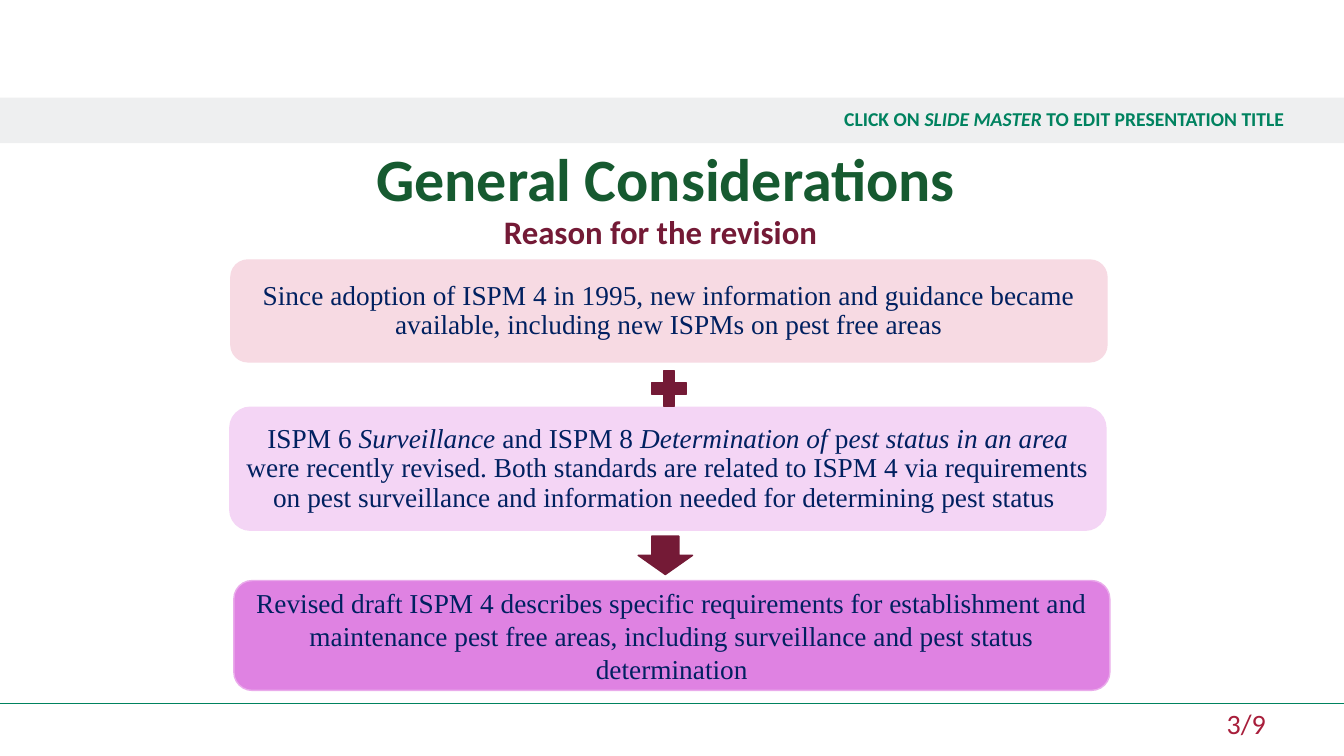
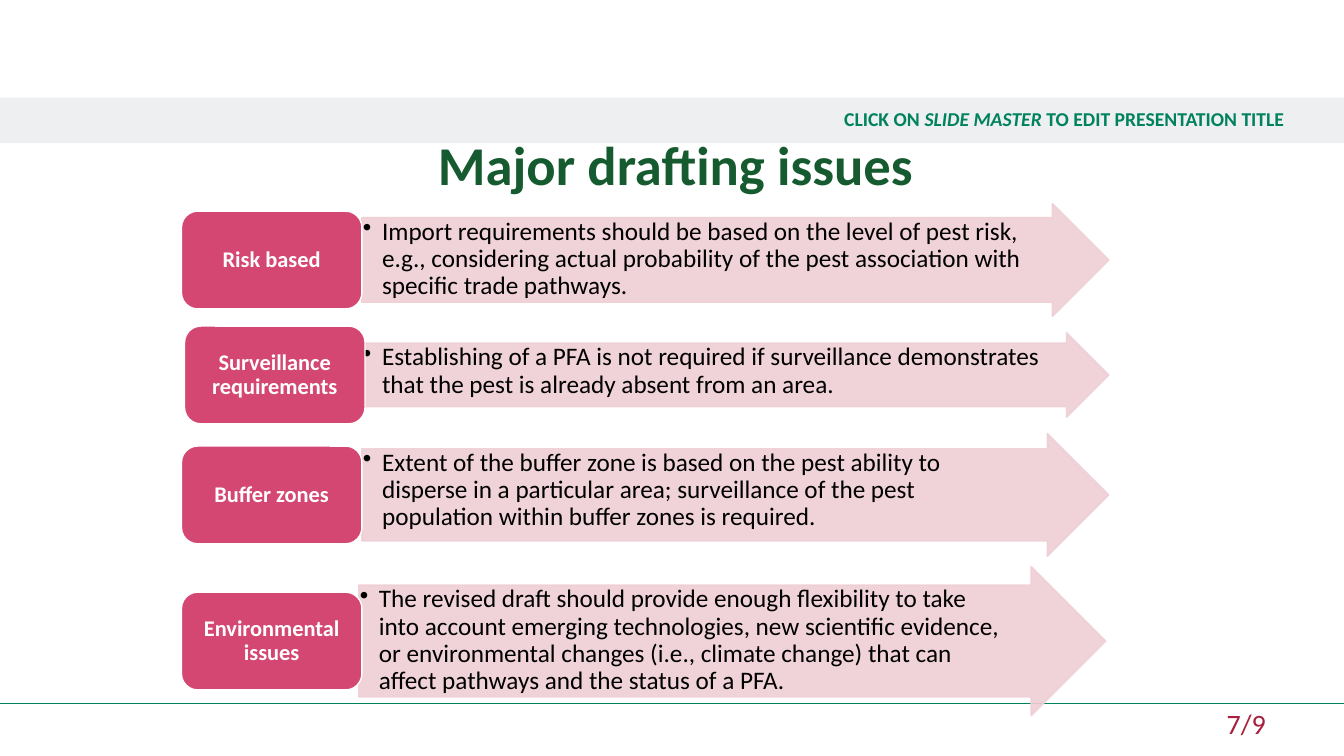
"""Build two slides on the revision of ISPM 4: its reasons and the drafting issues."""
from lxml.etree import SubElement
from pptx import Presentation
from pptx.dml.color import RGBColor
from pptx.enum.shapes import MSO_CONNECTOR as Connector, MSO_SHAPE as Preset
from pptx.enum.text import MSO_ANCHOR as Anchor, MSO_AUTO_SIZE as AutoSize, PP_ALIGN as Align
from pptx.oxml.ns import qn
from pptx.util import Inches, Pt

GREEN, DARK_GREEN, WINE, NAVY = "00825F", "165A30", "741A36", "002060"
PINK, ROSE, WHITE, BLACK = "EFCFD5", "D54773", "FFFFFF", "000000"
BAND, PAGE_RED = "D8D9DC", "A81E3B"

presentation = Presentation()
presentation.slide_width, presentation.slide_height = Inches(13.33), Inches(7.5)
column, row = presentation.slide_width / 100, presentation.slide_height / 100


def draw(slide, preset, left, top, width, height, fill, line=None, opacity=100):
    """Draw a flat preset shape, measured in columns and rows."""
    shape = slide.shapes.add_shape(
        preset, int(left * column), int(top * row), int(width * column), int(height * row))
    shape.shadow.inherit = False
    shape.fill.solid()
    shape.fill.fore_color.rgb = RGBColor.from_string(fill)
    if line:
        shape.line.color.rgb = RGBColor.from_string(line)
        shape.line.width = Pt(1)
    else:
        shape.line.fill.background()
    if opacity < 100:
        for color in list(shape.element.spPr.iter(qn("a:srgbClr"))):
            SubElement(color, qn("a:alpha"), val=str(opacity * 1000))
    return shape


def write(shape, runs, size, color, font="Calibri", bold=False, align=Align.CENTER,
          spacing=1.0, anchor=Anchor.MIDDLE, margins=(0.1, 0.05, 0.1, 0.05), wrap=True,
          bullet=False):
    """Fill a shape with one paragraph of (text, italic) runs."""
    frame = shape.text_frame
    left, top, right, bottom = (Inches(margin) for margin in margins)
    frame_format = {"auto_size": AutoSize.NONE, "word_wrap": wrap, "vertical_anchor": anchor,
                    "margin_left": left, "margin_top": top,
                    "margin_right": right, "margin_bottom": bottom}
    for name, value in frame_format.items():
        setattr(frame, name, value)
    paragraph = frame.paragraphs[0]
    if bullet:
        properties = paragraph._p.get_or_add_pPr()
        properties.set("marL", str(Inches(0.19)))
        properties.set("indent", str(-Inches(0.19)))
        SubElement(properties, qn("a:buChar"), char="•")
    paragraph.alignment, paragraph.line_spacing = align, spacing
    for text, italic in runs:
        run = paragraph.add_run()
        run.text = text
        run_format = {"name": font, "size": Pt(size), "bold": bold, "italic": italic}
        for name, value in run_format.items():
            setattr(run.font, name, value)
        run.font.color.rgb = RGBColor.from_string(color)


pages = [
    ("General Considerations ", 42.9, 17.1, 18, "3/9"),
    ("Major drafting issues", 39, 17.33, 16.67, "7/9"),
]
slides = []
for title_text, title_size, title_left, title_top, page_number in pages:
    slide = presentation.slides.add_slide(presentation.slide_layouts[5])
    slides.append(slide)
    title = slide.shapes.title
    title.left, title.top = int(title_left * column), int(title_top * row)
    title.width, title.height = int(65.85 * column), int(16.27 * row)
    write(title, [(title_text, False)], title_size, DARK_GREEN, bold=True, anchor=Anchor.TOP)

    rule_top = int(93.07 * row)
    rule = slide.shapes.add_connector(
        Connector.STRAIGHT, 0, rule_top, presentation.slide_width, rule_top)
    rule.line.color.rgb = RGBColor.from_string(GREEN)
    rule.line.width = Pt(1)
    SubElement(rule.element.spPr, qn("a:effectLst"))

    band = draw(slide, Preset.RECTANGLE, 0, 12.93, 100, 6, BAND, opacity=42)
    write(band, [("CLICK ON ", False), ("SLIDE MASTER ", True),
                 ("TO EDIT PRESENTATION TITLE", False)],
          14, GREEN, bold=True, align=Align.RIGHT, spacing=0.9,
          margins=(0.59, 0.05, 0.59, 0.05))

    number = slide.shapes.add_textbox(
        int(86.85 * column), int(93.47 * row), int(13.13 * column), int(5.2 * row))
    write(number, [(page_number, False)], 20, PAGE_RED, align=Align.LEFT,
          anchor=Anchor.TOP, margins=(0.59, 0, 0.39, 0.05))

reasons, issues = slides

subtitle = reasons.shapes.add_textbox(
    int(36.75 * column), int(27.33 * row), int(29.48 * column), int(6.53 * row))
write(subtitle, [("Reason for the revision", False)], 23.4, WINE, bold=True,
      align=Align.LEFT, anchor=Anchor.TOP, wrap=False)

reason_boxes = [
    (17.18, 34.4, 13.47, "F7DAE3", "F7DAE3", 0.9, [
        ("Since adoption of ISPM 4 in 1995, new information and guidance became available, "
         "including new ISPMs on pest free areas", False)]),
    (17.1, 53.87, 16.27, "F4D5F5", "F4D5F5", 0.9, [
        ("ISPM 6 ", False), ("Surveillance", True), (" and ISPM 8 ", False),
        ("Determination of ", True), ("p", False), ("est status in an area ", True),
        ("were recently revised. Both standards are related to ISPM 4 via requirements on "
         "pest surveillance and information needed for determining pest status ", False)]),
    (17.4, 76.8, 14.53, "DF82E2", "EAABEB", 1.0, [
        ("Revised draft ISPM 4 describes specific requirements for establishment and "
         "maintenance pest free areas, including surveillance and pest status "
         "determination", False)]),
]
for left, top, height, fill, line, spacing, runs in reason_boxes:
    box = draw(reasons, Preset.ROUNDED_RECTANGLE, left, top, 65.18, height, fill, line)
    write(box, runs, 19.5, NAVY, font="Times New Roman", spacing=spacing)

draw(reasons, Preset.DOWN_ARROW, 47.48, 70.93, 4.05, 5.07, WINE, WINE)
draw(reasons, Preset.MATH_PLUS, 48, 48.27, 3.53, 6.27, WINE, WINE)

issue_rows = [
    (13.5, 26.93, 26.93, 14.93, "Risk based",
     "Import requirements should be based on the level of pest risk, e.g., considering "
     "actual probability of the pest association with specific trade pathways."),
    (13.73, 26.93, 44, 11.2, "Surveillance requirements",
     "Establishing of a PFA is not required if surveillance demonstrates that the pest is "
     "already absent from an area."),
    (13.5, 26.93, 57.33, 16.27, "Buffer zones",
     "Extent of the buffer zone is based on the pest ability to disperse in a particular "
     "area; surveillance of the pest population within buffer zones is required."),
    (13.5, 26.7, 74.93, 19.73, "Environmental issues",
     "The revised draft should provide enough flexibility to take into account emerging "
     "technologies, new scientific evidence, or environmental changes (i.e., climate "
     "change) that can affect pathways and the status of a PFA."),
]
label_height = 12.93
for label_left, arrow_left, top, height, label_text, issue_text in issue_rows:
    arrow = draw(issues, Preset.RIGHT_ARROW, arrow_left, top, 55.58, height,
                 PINK, PINK, opacity=90)
    arrow.adjustments[0], arrow.adjustments[1] = 0.75, 0.5
    head_margin = arrow.height.inches / 4 + 0.01
    write(arrow, [(issue_text, False)], 18, BLACK, align=Align.LEFT, spacing=0.9,
          anchor=Anchor.TOP, margins=(0.01, 0.01, head_margin, 0.01), bullet=True)
    label = draw(issues, Preset.ROUNDED_RECTANGLE, label_left,
                 top + (height - label_height) / 2, 13.43, label_height, ROSE, WHITE)
    write(label, [(label_text, False)], 16, WHITE, bold=True, spacing=0.9,
          margins=(0.07, 0.03, 0.07, 0.03))

presentation.save("out.pptx")
